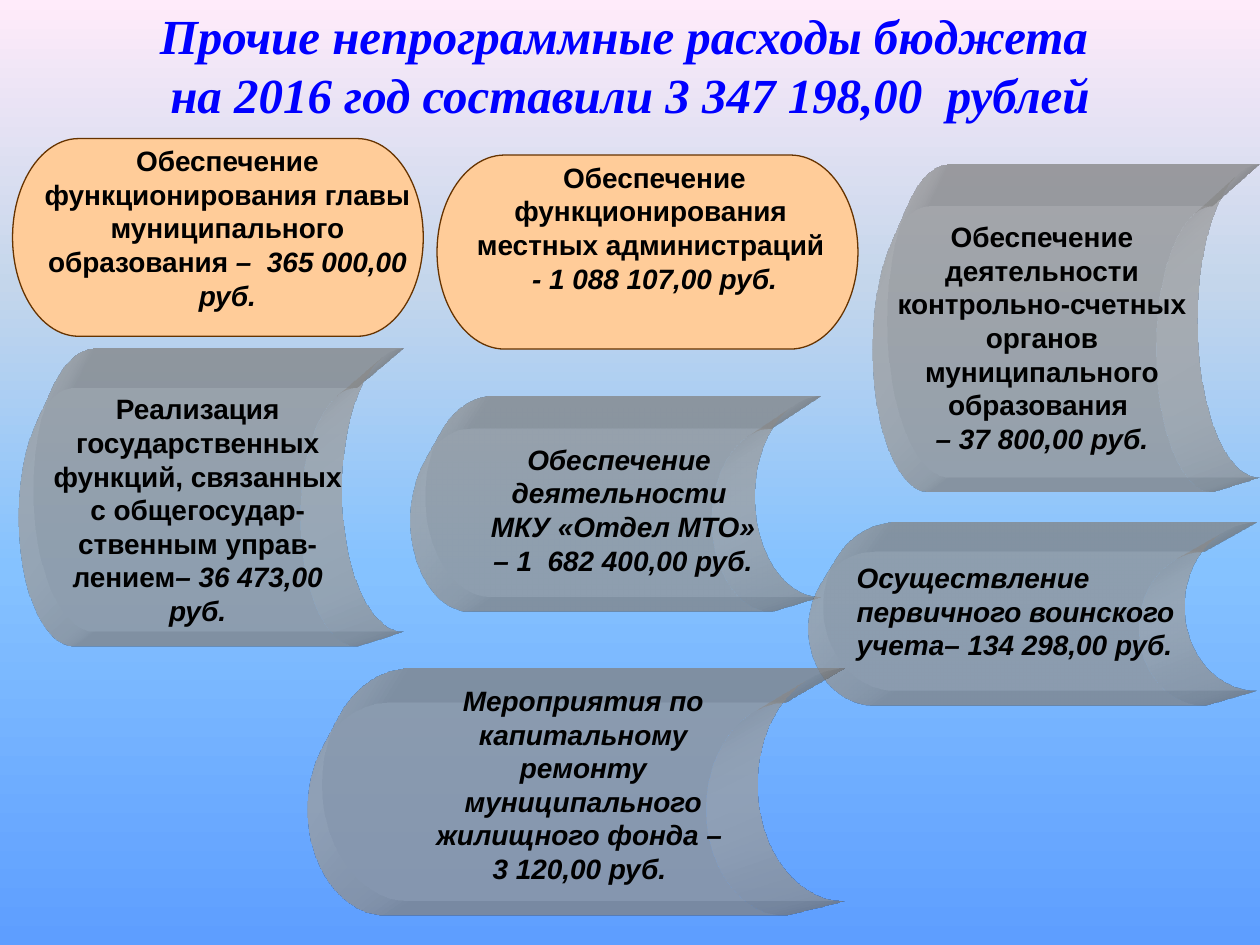
"""Builds the slide on other non-programme budget expenses for 2016."""
from dataclasses import dataclass

from lxml.etree import SubElement
from pptx import Presentation
from pptx.dml.color import RGBColor
from pptx.enum.shapes import MSO_SHAPE
from pptx.enum.text import MSO_ANCHOR, MSO_AUTO_SIZE, PP_ALIGN
from pptx.oxml import parse_xml
from pptx.oxml.ns import nsdecls, qn
from pptx.util import Pt


@dataclass(frozen=True)
class Theme:
    title_font: str = "Times New Roman"
    body_font: str = "Arial"
    title_size: int = 28
    body_size: int = 16
    title_color: str = "0000FF"
    body_color: str = "000000"
    card_fill: str = "FFCC99"
    card_line: str = "663300"
    drum_fill: str = "C0C0C0"
    drum_alpha: int = 49
    sky: tuple = ((0, "FFEBFA"), (30, "C4D6EB"), (60, "85C2FF"), (100, "5E9EFF"))


THEME = Theme()


def rgb(value):
    return RGBColor.from_string(value)


def paint_background(s):
    fill = s.background.fill
    fill.gradient()
    fill.gradient_angle = 270
    stops = s.element.xpath(".//p:bg//a:gsLst")[0]
    for stop in list(stops):
        stops.remove(stop)
    for pos, color in THEME.sky:
        stop = SubElement(stops, qn("a:gs"), pos=str(pos * 1000))
        SubElement(stop, qn("a:srgbClr"), val=color)


def write(tf, paragraphs, align=PP_ALIGN.CENTER, title=False):
    """Each paragraph is a list of (text, italic) runs."""
    tf.word_wrap = True
    for i, runs in enumerate(paragraphs):
        p = tf.paragraphs[0] if i == 0 else tf.add_paragraph()
        p.alignment = align
        p.font.name = THEME.title_font if title else THEME.body_font
        p.font.size = Pt(THEME.title_size if title else THEME.body_size)
        p.font.color.rgb = rgb(THEME.title_color if title else THEME.body_color)
        p.font.bold = True
        for text, italic in runs:
            r = p.add_run()
            r.text = text
            r.font.italic = italic


def add_text(s, box, paragraphs, margins=(6.5, 3), **style):
    tf = s.shapes.add_textbox(*map(Pt, box)).text_frame
    tf.auto_size = MSO_AUTO_SIZE.SHAPE_TO_FIT_TEXT
    tf.margin_left = tf.margin_right = Pt(margins[0])
    tf.margin_top = tf.margin_bottom = Pt(margins[1])
    write(tf, paragraphs, **style)
    return tf


def add_card(s, box):
    sp = s.shapes.add_shape(MSO_SHAPE.FLOWCHART_TERMINATOR, *map(Pt, box))
    sp.shadow.inherit = False
    sp.fill.solid()
    sp.fill.fore_color.rgb = rgb(THEME.card_fill)
    sp.line.color.rgb = rgb(THEME.card_line)
    sp.line.width = Pt(0.75)


def add_drum(s, box):
    """Adds a translucent extruded shape."""
    sp = s.shapes.add_shape(MSO_SHAPE.FLOWCHART_STORED_DATA, *map(Pt, box))
    sp.shadow.inherit = False
    sp.fill.solid()
    sp.fill.fore_color.rgb = rgb(THEME.drum_fill)
    sp.line.fill.background()
    props = sp.element.spPr
    color = props.find(qn("a:solidFill")).find(qn("a:srgbClr"))
    SubElement(color, qn("a:alpha"), val=str(THEME.drum_alpha * 1000))
    props.append(parse_xml(
        f'<a:scene3d {nsdecls("a")}><a:camera prst="legacyPerspectiveBottomLeft"/>'
        '<a:lightRig rig="legacyFlat3" dir="t"/></a:scene3d>'))
    props.append(parse_xml(
        f'<a:sp3d {nsdecls("a")} extrusionH="887400" prstMaterial="legacyMatte">'
        '<a:bevelT w="13500" h="13500" prst="angle"/>'
        '<a:bevelB w="13500" h="13500" prst="angle"/>'
        f'<a:extrusionClr><a:srgbClr val="{THEME.drum_fill}"/></a:extrusionClr></a:sp3d>'))
    return sp


def main():
    prs = Presentation()
    prs.slide_width, prs.slide_height = Pt(720), Pt(540)
    s = prs.slides.add_slide(prs.slide_layouts[6])
    paint_background(s)

    add_text(s, (0, 0, 720, 73.4), [
        [("Прочие непрограммные расходы бюджета ", True)],
        [("на 2016 год составили 3 347 198,00  рублей", True)],
    ], title=True)

    add_card(s, (7.2, 79.2, 234.7, 113))
    add_card(s, (249.8, 88.6, 240.5, 110.9))
    add_drum(s, (19.4, 199.4, 211, 161.3))
    add_drum(s, (507.6, 94.3, 212.4, 177.8))

    add_text(s, (10.1, 79.2, 239.8, 103.7), [
        [("Обеспечение функционирования главы муниципального образования", False),
         (" –  365 000,00 руб.", True)],
    ])
    add_text(s, (252, 88.6, 244.1, 84.2), [
        [("Обеспечение функционирования ", False)],
        [("местных администраций ", False)],
        [("- 1 088 107,00 руб.", True)],
    ])
    add_text(s, (19.4, 221, 187.2, 141.8), [
        [("Реализация государственных функций, связанных с общегосудар-ственным управ-лением",
          False),
         ("– 36 473,00 руб.", True)],
    ])
    audit = add_text(s, (496.1, 116.6, 198.7, 148.3), [
        [("Обеспечение деятельности контрольно-счетных органов муниципального образования ",
          False)],
        [("– 37 800,00 руб.", True)],
    ])
    audit.margin_top = Pt(9)

    add_drum(s, (243.4, 226.8, 225.4, 113.8))
    add_text(s, (245.5, 249.8, 221, 84.2), [
        [("Обеспечение ", True)],
        [("деятельности ", True)],
        [("МКУ «Отдел МТО»", True)],
        [("– 1  682 400,00 руб.", True)],
    ])

    add_drum(s, (470.9, 298.8, 247, 95.8))
    add_text(s, (482.4, 316.8, 209.5, 65.5), [
        [("Осуществление первичного воинского учета– 134 298,00 руб.", True)],
    ], margins=(7.2, 3.6), align=PP_ALIGN.LEFT)

    housing = add_drum(s, (184.3, 382.3, 298.1, 131.8)).text_frame
    housing.vertical_anchor = MSO_ANCHOR.MIDDLE
    write(housing, [
        [("Мероприятия по капитальному ремонту муниципального жилищного фонда – ", True)],
        [("3 120,00 руб. ", True)],
    ])

    prs.save("out.pptx")


if __name__ == "__main__":
    main()
